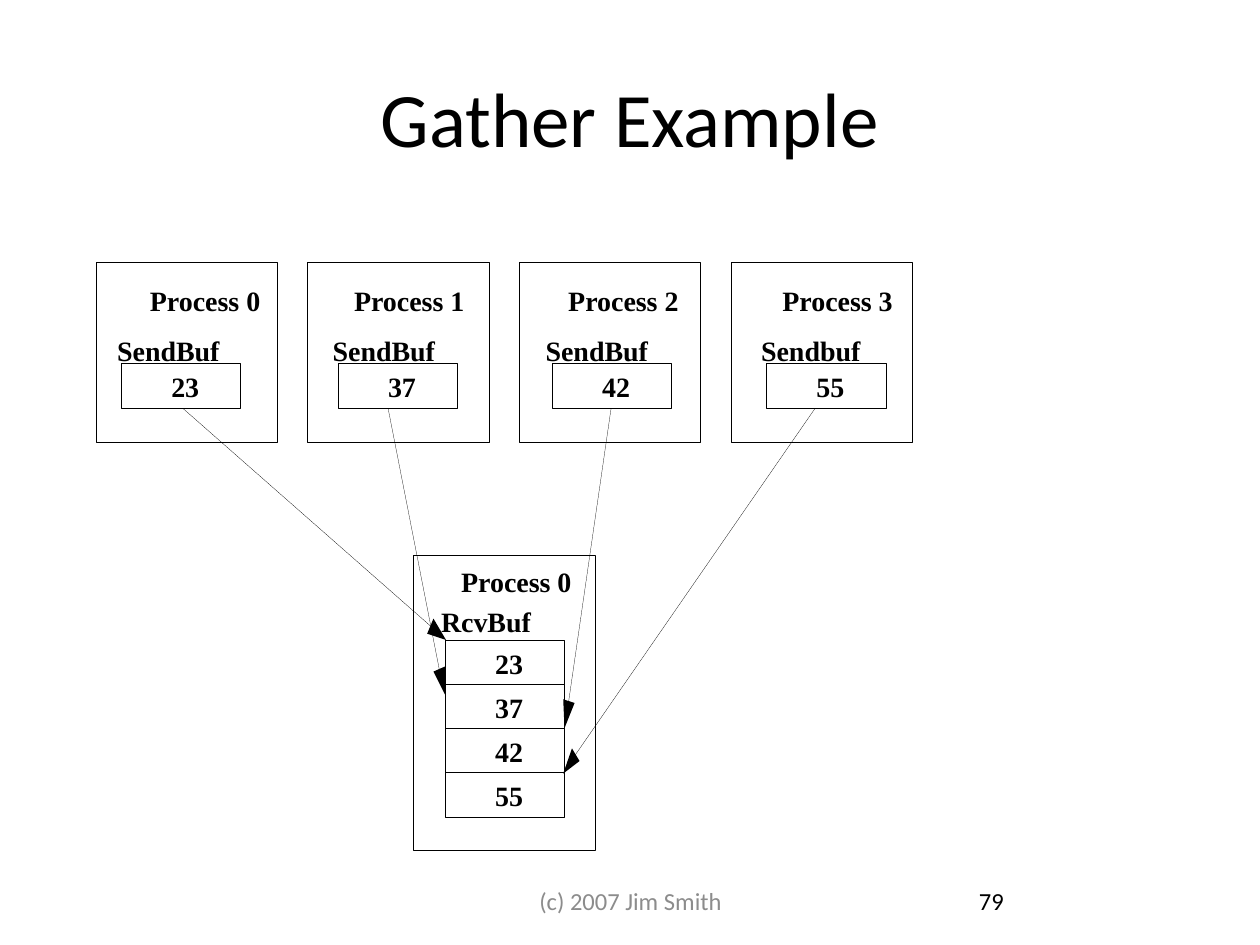
"""Build the Gather Example slide: four send buffers collected into one receive buffer."""

from dataclasses import dataclass

from lxml.etree import SubElement
from pptx import Presentation
from pptx.dml.color import RGBColor
from pptx.enum.shapes import MSO_CONNECTOR, MSO_SHAPE
from pptx.enum.text import MSO_ANCHOR, MSO_AUTO_SIZE, PP_ALIGN
from pptx.oxml.ns import qn
from pptx.slide import Slide
from pptx.text.text import _Paragraph as Paragraph
from pptx.util import Inches, Pt


@dataclass(frozen=True)
class Theme:
    """Colours, fonts and sizes of the slide."""

    ink: RGBColor = RGBColor(0x00, 0x00, 0x00)
    paper: RGBColor = RGBColor(0xFF, 0xFF, 0xFF)
    muted: RGBColor = RGBColor(0x8C, 0x8C, 0x8C)
    heading_font: str = "Calibri"
    diagram_font: str = "Times New Roman"
    title_size: float = 44
    label_size: float = 16
    footer_size: float = 14
    line_width: float = 0.13


@dataclass(frozen=True)
class Sender:
    """A sending process with its buffer value and text positions."""

    name: str
    buffer: str
    value: str
    cell_left: float
    name_left: float
    buffer_left: float


@dataclass(frozen=True)
class Arrow:
    """A line from a send buffer to the base of a triangular head."""

    start: tuple[float, float]
    end: tuple[float, float]
    head: tuple[tuple[float, float], ...]


THEME = Theme()
PROCESS_LEFT, PROCESS_TOP, PROCESS_PITCH = 0.76, 2.08, 1.68
PROCESS_WIDTH, PROCESS_HEIGHT = 1.44, 1.43
CELL_WIDTH, CELL_HEIGHT = 0.95, 0.36
SEND_TOP = 2.88
SEND_BOTTOM = SEND_TOP + CELL_HEIGHT
RECEIVE_LEFT, RECEIVE_TOP, RECEIVE_PITCH = 3.53, 5.08, 0.35

SENDERS = [
    Sender("Process 0", "SendBuf", "23", 0.96, 1.19, 0.93),
    Sender("Process 1", "SendBuf", "37", 2.68, 2.81, 2.64),
    Sender("Process 2", "SendBuf", "42", 4.38, 4.51, 4.33),
    Sender("Process 3", "Sendbuf", "55", 6.08, 6.21, 6.04),
]
ARROWS = [
    Arrow((1.45, SEND_BOTTOM), (3.43, 4.98), ((3.39, 5.03), (3.54, 5.08), (3.44, 4.91))),
    Arrow((3.08, SEND_BOTTOM), (3.49, 5.33), ((3.44, 5.33), (3.53, 5.51), (3.53, 5.29))),
    Arrow((4.85, SEND_BOTTOM), (4.51, 5.59), ((4.47, 5.55), (4.48, 5.78), (4.56, 5.58))),
    Arrow((6.47, SEND_BOTTOM), (4.56, 6.0), ((4.54, 5.94), (4.47, 6.14), (4.6, 6.04))),
]


def style_paragraph(
    paragraph: Paragraph, font: str, size: float, color: RGBColor, bold: bool = False
) -> None:
    """Set the font of a whole paragraph."""
    paragraph.font.name = font
    paragraph.font.size = Pt(size)
    paragraph.font.bold = bold
    paragraph.font.color.rgb = color


def add_box(slide: Slide, left: float, top: float, width: float, height: float) -> None:
    """Add a white rectangle with a hairline border."""
    box = slide.shapes.add_shape(
        MSO_SHAPE.RECTANGLE, Inches(left), Inches(top), Inches(width), Inches(height)
    )
    box.shadow.inherit = False
    box.fill.solid()
    box.fill.fore_color.rgb = THEME.paper
    box.line.color.rgb = THEME.ink
    box.line.width = Pt(THEME.line_width)


def add_label(slide: Slide, text: str, left: float, top: float, width: float) -> None:
    """Add a bold diagram label without insets."""
    label = slide.shapes.add_textbox(Inches(left), Inches(top), Inches(width), Inches(0.27))
    frame = label.text_frame
    frame.margin_left = frame.margin_right = frame.margin_top = frame.margin_bottom = 0
    frame.word_wrap = False
    frame.auto_size = MSO_AUTO_SIZE.SHAPE_TO_FIT_TEXT
    frame.text = text
    style_paragraph(frame.paragraphs[0], THEME.diagram_font, THEME.label_size, THEME.ink, True)


def add_cell(slide: Slide, value: str, left: float, top: float) -> None:
    """Add one buffer cell with its value."""
    add_box(slide, left, top, CELL_WIDTH, CELL_HEIGHT)
    add_label(slide, value, left + 0.4, top + 0.05, 0.23)


def add_sender(slide: Slide, index: int, sender: Sender) -> None:
    """Add a sending process and its buffer."""
    left = PROCESS_LEFT + index * PROCESS_PITCH
    add_box(slide, left, PROCESS_TOP, PROCESS_WIDTH, PROCESS_HEIGHT)
    add_label(slide, sender.name, sender.name_left, 2.25, 0.89)
    add_label(slide, sender.buffer, sender.buffer_left, 2.65, 0.82)
    add_cell(slide, sender.value, sender.cell_left, SEND_TOP)


def add_receiver(slide: Slide) -> None:
    """Add the receiving process with one cell per sender."""
    add_box(slide, 3.28, 4.41, PROCESS_WIDTH, 2.34)
    add_label(slide, SENDERS[0].name, 3.66, 4.48, 0.89)
    add_label(slide, "RcvBuf", 3.5, 4.8, 0.72)
    for index, sender in enumerate(SENDERS):
        add_cell(slide, sender.value, RECEIVE_LEFT, RECEIVE_TOP + index * RECEIVE_PITCH)


def add_arrow(slide: Slide, arrow: Arrow) -> None:
    """Add a hairline connector and its solid head."""
    ends = [Inches(value) for value in (*arrow.start, *arrow.end)]
    connector = slide.shapes.add_connector(MSO_CONNECTOR.STRAIGHT, *ends)
    connector.line.color.rgb = THEME.ink
    connector.line.width = Pt(THEME.line_width)
    SubElement(connector._element.spPr, qn("a:effectLst"))
    points = [(Inches(x), Inches(y)) for x, y in arrow.head]
    builder = slide.shapes.build_freeform(*points[0])
    builder.add_line_segments(points[1:], close=True)
    head = builder.convert_to_shape()
    head.shadow.inherit = False
    head.fill.solid()
    head.fill.fore_color.rgb = THEME.ink
    head.line.fill.background()


def add_footer(
    slide: Slide, text: str, left: float, width: float, color: RGBColor,
    alignment: PP_ALIGN, indent: float = 0.1,
) -> None:
    """Add a footer text in the bottom band."""
    footer = slide.shapes.add_textbox(Inches(left), Inches(6.95), Inches(width), Inches(0.4))
    frame = footer.text_frame
    frame.word_wrap = True
    frame.vertical_anchor = MSO_ANCHOR.MIDDLE
    frame.margin_left = Inches(indent)
    frame.text = text
    paragraph = frame.paragraphs[0]
    paragraph.alignment = alignment
    style_paragraph(paragraph, THEME.heading_font, THEME.footer_size, color)


def add_title(slide: Slide, text: str) -> None:
    """Fill and place the title placeholder."""
    title = slide.shapes.title
    title.left, title.top = Inches(0.5), Inches(0.3)
    title.width, title.height = Inches(9), Inches(1.25)
    title.text_frame.text = text
    title.text_frame.vertical_anchor = MSO_ANCHOR.MIDDLE
    paragraph = title.text_frame.paragraphs[0]
    paragraph.alignment = PP_ALIGN.CENTER
    style_paragraph(paragraph, THEME.heading_font, THEME.title_size, THEME.ink)


def main() -> None:
    """Build and save the presentation."""
    presentation = Presentation()
    presentation.slide_width, presentation.slide_height = Inches(10), Inches(7.5)
    slide = presentation.slides.add_slide(presentation.slide_layouts[5])
    add_title(slide, "Gather Example")
    add_receiver(slide)
    for index, sender in enumerate(SENDERS):
        add_sender(slide, index, sender)
    for arrow in ARROWS:
        add_arrow(slide, arrow)
    add_footer(slide, "79", 7.17, 2.33, THEME.ink, PP_ALIGN.LEFT, indent=0.6)
    add_footer(slide, "(c) 2007 Jim Smith", 3.42, 3.17, THEME.muted, PP_ALIGN.CENTER)
    presentation.save("out.pptx")


if __name__ == "__main__":
    main()
